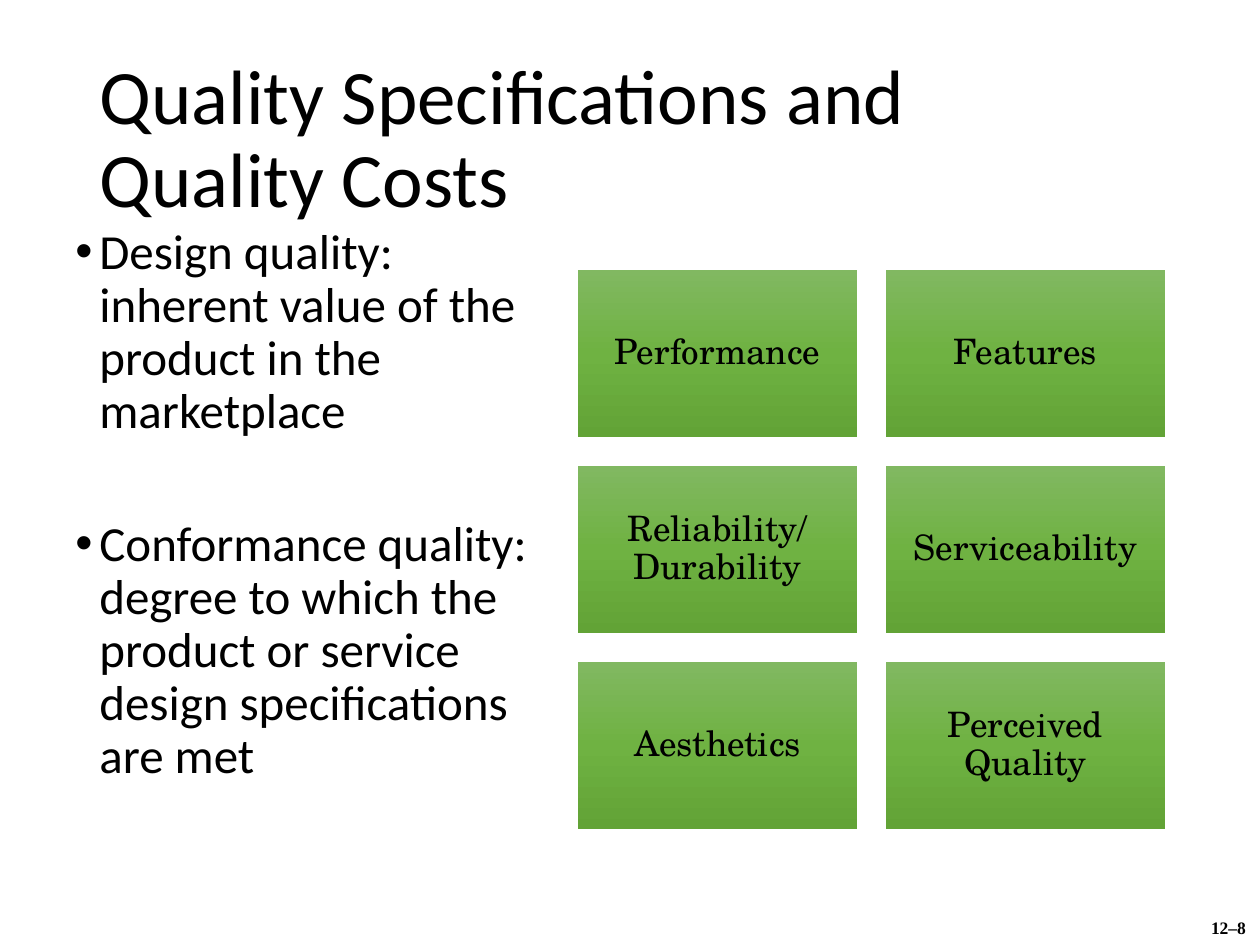
from copy import deepcopy
from dataclasses import dataclass

from lxml import etree
from pptx import Presentation
from pptx.dml.color import RGBColor
from pptx.enum.shapes import MSO_SHAPE
from pptx.enum.text import MSO_ANCHOR, MSO_AUTO_SIZE, PP_ALIGN
from pptx.oxml.ns import qn
from pptx.util import Emu, Pt

RECTANGLE = MSO_SHAPE.RECTANGLE
MIDDLE, TOP = MSO_ANCHOR.MIDDLE, MSO_ANCHOR.TOP
LEFT, CENTER = PP_ALIGN.LEFT, PP_ALIGN.CENTER
NO_FIT = MSO_AUTO_SIZE.NONE
TITLE_ONLY = 5
PX_PER_INCH = 126


@dataclass(frozen=True)
class Style:
    font: str
    size: int
    bold: bool = False


@dataclass(frozen=True)
class Theme:
    ink: RGBColor = RGBColor(0, 0, 0)
    card_gradient: tuple[str, ...] = ("81B861", "6FB242", "62A336")
    title: Style = Style("Calibri", 44)
    body: Style = Style("Calibri", 28)
    card: Style = Style("TeX Gyre Schola", 20)
    page_number: Style = Style("Times New Roman", 10, True)
    line_spacing: float = 0.9


@dataclass(frozen=True)
class Box:
    left: int
    top: int
    width: int
    height: int

    def emu(self) -> tuple[Emu, ...]:
        return tuple(px(n) for n in (self.left, self.top, self.width, self.height))


@dataclass(frozen=True)
class Definition:
    text: str
    space_before: float


THEME = Theme()
TITLE_BOX = Box(87, 50, 1086, 183)
BODY_BOX = Box(63, 221, 483, 693)
NUMBER_BOX = Box(1192, 911, 73, 34)
FIRST_CARD = Box(578, 270, 279, 167)
COLUMN_STEP, ROW_STEP = 308, 196
CARD_COLUMNS = 2
CARD_INSET = 10
BULLET_INDENT = 24

TITLE_LINES = ("Quality Specifications and ", "Quality Costs")
DEFINITIONS = (
    Definition("Design quality: inherent value of the product in the marketplace", 7.5),
    Definition(
        "Conformance quality: degree to which the product or service "
        "design specifications are met", 45.75),
)
DIMENSIONS = ("Performance", "Features", "Reliability/ Durability",
              "Serviceability", "Aesthetics", "Perceived Quality")


def px(length: int) -> Emu:
    return Emu(round(length * 914400 / PX_PER_INCH))


def add_span(para, text: str, style: Style) -> None:
    span = para.add_run()
    span.text = text
    span.font.name = style.font
    span.font.size = Pt(style.size)
    span.font.bold = style.bold
    span.font.color.rgb = THEME.ink


def set_frame(frame, anchor, wrap: bool = True) -> None:
    frame.auto_size = NO_FIT
    frame.word_wrap = wrap
    frame.vertical_anchor = anchor


def add_bullet(para) -> None:
    properties = para._p.get_or_add_pPr()
    properties.set("marL", str(px(BULLET_INDENT)))
    properties.set("indent", str(-px(BULLET_INDENT)))
    etree.SubElement(properties, qn("a:buFont"), typeface="Arial")
    etree.SubElement(properties, qn("a:buChar"), char="•")


def fill_with_gradient(shape, colors: tuple[str, ...]) -> None:
    """Spread the colours evenly from the top of the shape to its bottom."""
    shape.fill.gradient()
    shape.fill.gradient_angle = 270
    stop_list = shape._element.spPr.find(".//" + qn("a:gsLst"))
    while len(stop_list) < len(colors):
        stop_list.append(deepcopy(stop_list[0]))
    for index, (stop, color) in enumerate(zip(shape.fill.gradient_stops, colors)):
        stop.position = index / (len(colors) - 1)
        stop.color.rgb = RGBColor.from_string(color)


def set_title(page) -> None:
    title = page.shapes.title
    title.left, title.top, title.width, title.height = TITLE_BOX.emu()
    set_frame(title.text_frame, MIDDLE)
    para = title.text_frame.paragraphs[0]
    para.alignment = LEFT
    para.line_spacing = THEME.line_spacing
    for index, line in enumerate(TITLE_LINES):
        if index:
            para.add_line_break()
        add_span(para, line, THEME.title)


def add_definitions(page) -> None:
    frame = page.shapes.add_textbox(*BODY_BOX.emu()).text_frame
    set_frame(frame, TOP)
    for index, definition in enumerate(DEFINITIONS):
        para = frame.add_paragraph() if index else frame.paragraphs[0]
        para.line_spacing = THEME.line_spacing
        para.space_before = Pt(definition.space_before)
        add_bullet(para)
        add_span(para, definition.text, THEME.body)


def add_card(page, box: Box, label: str) -> None:
    card = page.shapes.add_shape(RECTANGLE, *box.emu())
    card.shadow.inherit = False
    card.line.fill.background()
    fill_with_gradient(card, THEME.card_gradient)
    frame = card.text_frame
    set_frame(frame, MIDDLE)
    frame.margin_left = frame.margin_right = px(CARD_INSET)
    frame.margin_top = frame.margin_bottom = px(CARD_INSET)
    para = frame.paragraphs[0]
    para.alignment = CENTER
    para.line_spacing = THEME.line_spacing
    add_span(para, label, THEME.card)


def add_cards(page) -> None:
    for index, label in enumerate(DIMENSIONS):
        row, column = divmod(index, CARD_COLUMNS)
        box = Box(FIRST_CARD.left + column * COLUMN_STEP,
                  FIRST_CARD.top + row * ROW_STEP,
                  FIRST_CARD.width, FIRST_CARD.height)
        add_card(page, box, label)


def add_page_number(page) -> None:
    frame = page.shapes.add_textbox(*NUMBER_BOX.emu()).text_frame
    set_frame(frame, TOP, wrap=False)
    para = frame.paragraphs[0]
    para.alignment = CENTER
    add_span(para, "12–8", THEME.page_number)


def main() -> None:
    deck = Presentation()
    deck.slide_width, deck.slide_height = px(1260), px(945)
    page = deck.slides.add_slide(deck.slide_layouts[TITLE_ONLY])
    set_title(page)
    add_definitions(page)
    add_cards(page)
    add_page_number(page)
    deck.save("out.pptx")


if __name__ == "__main__":
    main()
